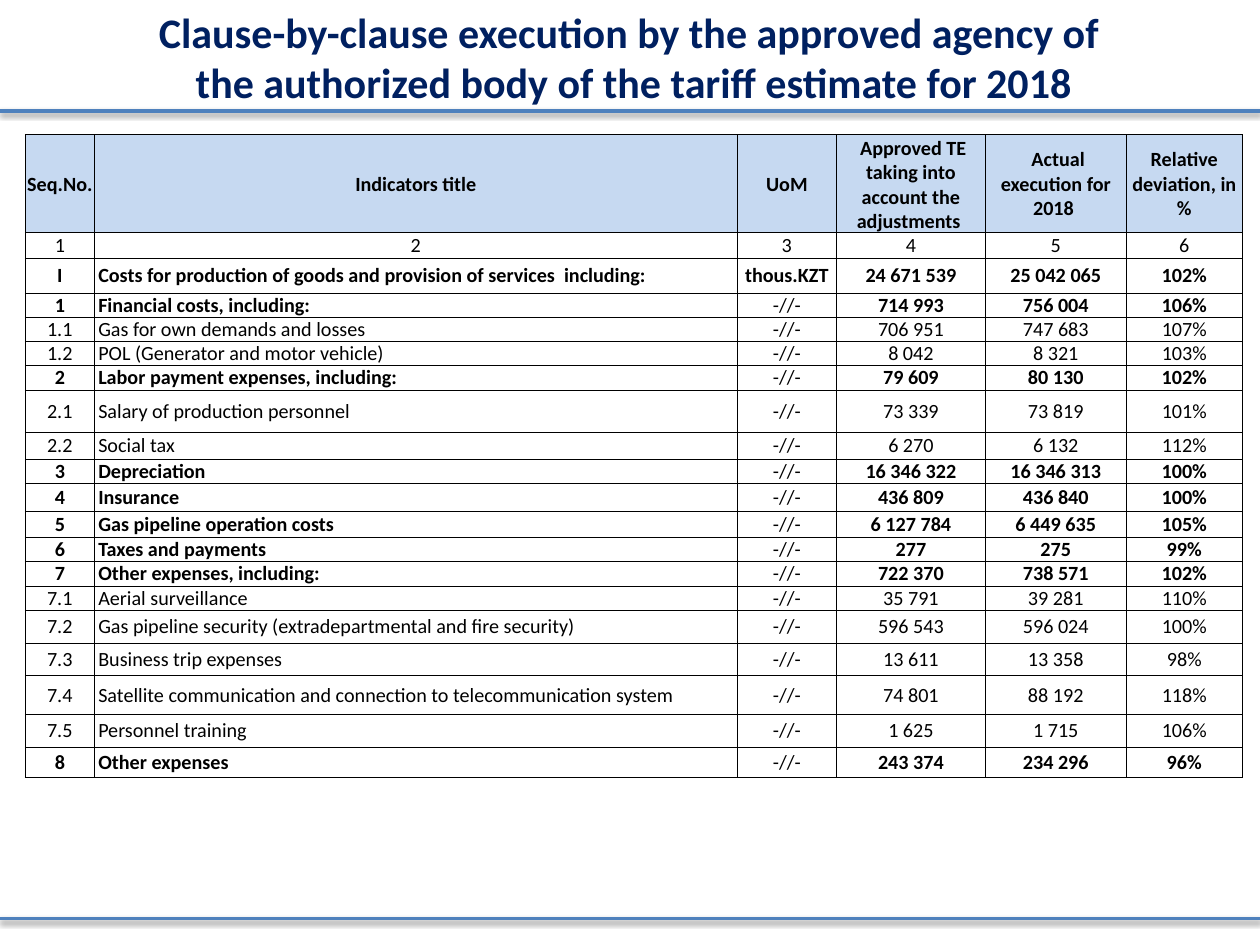
from lxml import etree
from pptx import Presentation
from pptx.dml.color import RGBColor
from pptx.enum.shapes import MSO_CONNECTOR
from pptx.enum.text import MSO_ANCHOR, MSO_AUTO_SIZE, PP_ALIGN
from pptx.oxml import parse_xml
from pptx.oxml.ns import nsdecls, qn
from pptx.util import Inches, Pt

CENTER, LEFT = PP_ALIGN.CENTER, PP_ALIGN.LEFT
MIDDLE, TOP = MSO_ANCHOR.MIDDLE, MSO_ANCHOR.TOP
STRAIGHT = MSO_CONNECTOR.STRAIGHT
FIT_SHAPE = MSO_AUTO_SIZE.SHAPE_TO_FIT_TEXT

THEME = {
    "font": "Calibri",
    "title_size": 24,
    "cell_size": 11.5,
    "title": "002060",
    "text": "000000",
    "rule": "4F81BD",
    "header": "C6D9F1",
    "border": "000000",
}

TITLE_LINES = [
    "Clause-by-clause execution by the approved agency of ",
    "the authorized body of the tariff estimate for 2018",
]
SAME_UNIT = "-//-"
HEADERS = [
    "Seq.No.",
    "Indicators title",
    "UoM",
    " Approved TE taking into account the adjustments ",
    " Actual execution for 2018 ",
    "Relative deviation, in %",
]
COLUMN_NUMBERS = ["1", "2", "3", "4", "5", "6"]
COSTS = [
    ("I", "Costs for production of goods and provision of services  including:",
     "thous.KZT", "24 671 539", "25 042 065", "102%"),
    ("1", "Financial costs, including:", SAME_UNIT, "714 993", "756 004", "106%"),
    ("1.1", "Gas for own demands and losses", SAME_UNIT, "706 951", "747 683", "107%"),
    ("1.2", "POL (Generator and motor vehicle)", SAME_UNIT, "8 042", "8 321", "103%"),
    ("2", "Labor payment expenses, including:", SAME_UNIT, "79 609", "80 130", "102%"),
    ("2.1", "Salary of production personnel", SAME_UNIT, "73 339", "73 819", "101%"),
    ("2.2", "Social tax", SAME_UNIT, "6 270", "6 132", "112%"),
    ("3", "Depreciation", SAME_UNIT, "16 346 322", "16 346 313", "100%"),
    ("4", "Insurance", SAME_UNIT, "436 809", "436 840", "100%"),
    ("5", "Gas pipeline operation costs", SAME_UNIT, "6 127 784", "6 449 635", "105%"),
    ("6", "Taxes and payments", SAME_UNIT, "277", "275", "99%"),
    ("7", "Other expenses, including:", SAME_UNIT, "722 370", "738 571", "102%"),
    ("7.1", "Aerial surveillance", SAME_UNIT, "35 791", "39 281", "110%"),
    ("7.2", "Gas pipeline security (extradepartmental and fire security)",
     SAME_UNIT, "596 543", "596 024", "100%"),
    ("7.3", "Business trip expenses", SAME_UNIT, "13 611", "13 358", "98%"),
    ("7.4", "Satellite communication and connection to telecommunication system",
     SAME_UNIT, "74 801", "88 192", "118%"),
    ("7.5", "Personnel training", SAME_UNIT, "1 625", "1 715", "106%"),
    ("8", "Other expenses", SAME_UNIT, "243 374", "234 296", "96%"),
]
COLUMN_WIDTHS = [0.55, 5.1, 0.79, 1.18, 1.12, 0.92]
ROW_HEIGHTS = [0.77, 0.2, 0.28, 0.19, 0.19, 0.19, 0.19, 0.34, 0.21, 0.19,
               0.22, 0.21, 0.19, 0.19, 0.19, 0.26, 0.26, 0.31, 0.26, 0.24]


def add_text(paragraph, text, size, color, bold, alignment):
    paragraph.alignment = alignment
    run = paragraph.add_run()
    run.text = text
    run.font.name = THEME["font"]
    run.font.size = Pt(size)
    run.font.bold = bold
    run.font.color.rgb = RGBColor.from_string(color)


def add_borders(cell):
    properties = cell._tc.get_or_add_tcPr()
    for side in ("a:lnL", "a:lnR", "a:lnT", "a:lnB"):
        line = etree.SubElement(properties, qn(side), w=str(Pt(0.5)))
        fill = etree.SubElement(line, qn("a:solidFill"))
        etree.SubElement(fill, qn("a:srgbClr"), val=THEME["border"])


presentation = Presentation()
presentation.slide_width = Inches(10)
presentation.slide_height = Inches(7.5)
slide = presentation.slides.add_slide(presentation.slide_layouts[5])

title = slide.shapes.title
title.left, title.top = Inches(0.03), Inches(0)
title.width, title.height = Inches(10), Inches(0.91)
title_frame = title.text_frame
title_frame.word_wrap = True
title_frame.auto_size = FIT_SHAPE
title_frame.vertical_anchor = TOP
for index, text in enumerate(TITLE_LINES):
    paragraph = title_frame.add_paragraph() if index else title_frame.paragraphs[0]
    add_text(paragraph, text, THEME["title_size"], THEME["title"], True, CENTER)

for y in (0.88, 7.29):
    rule = slide.shapes.add_connector(STRAIGHT, Inches(0), Inches(y), Inches(10), Inches(y))
    rule.line.color.rgb = RGBColor.from_string(THEME["rule"])
    rule.line.width = Pt(2)
    rule._element.spPr.append(parse_xml(
        f'<a:effectLst {nsdecls("a")}>'
        f'<a:outerShdw blurRad="{Pt(3.1)}" dist="{Pt(1.6)}" dir="5400000" rotWithShape="0">'
        f'<a:srgbClr val="{THEME["border"]}"><a:alpha val="38000"/></a:srgbClr>'
        '</a:outerShdw></a:effectLst>'))

rows = [HEADERS, COLUMN_NUMBERS, *COSTS]
table = slide.shapes.add_table(
    len(rows), len(HEADERS), Inches(0.2), Inches(1.07),
    Inches(sum(COLUMN_WIDTHS)), Inches(sum(ROW_HEIGHTS))).table
table.first_row = False
table.horz_banding = False
for column, width in zip(table.columns, COLUMN_WIDTHS):
    column.width = Inches(width)
for row, height in zip(table.rows, ROW_HEIGHTS):
    row.height = Inches(height)

for row_index, values in enumerate(rows):
    is_header = row_index == 0
    is_group = row_index != 1 and "." not in values[0]
    for column_index, text in enumerate(values):
        cell = table.cell(row_index, column_index)
        is_indicator = column_index == 1 and row_index > 1
        side_margin = Inches(0.01 if is_header else 0)
        cell.margin_left = Inches(0.03) if is_indicator else side_margin
        cell.margin_right = cell.margin_top = side_margin
        cell.margin_bottom = Inches(0)
        cell.vertical_anchor = MIDDLE
        add_borders(cell)
        if is_header:
            cell.fill.solid()
            cell.fill.fore_color.rgb = RGBColor.from_string(THEME["header"])
        else:
            cell.fill.background()
        bold = is_header or (is_group and text != SAME_UNIT)
        add_text(cell.text_frame.paragraphs[0], text, THEME["cell_size"], THEME["text"],
                 bold, LEFT if is_indicator else CENTER)

presentation.save("out.pptx")
